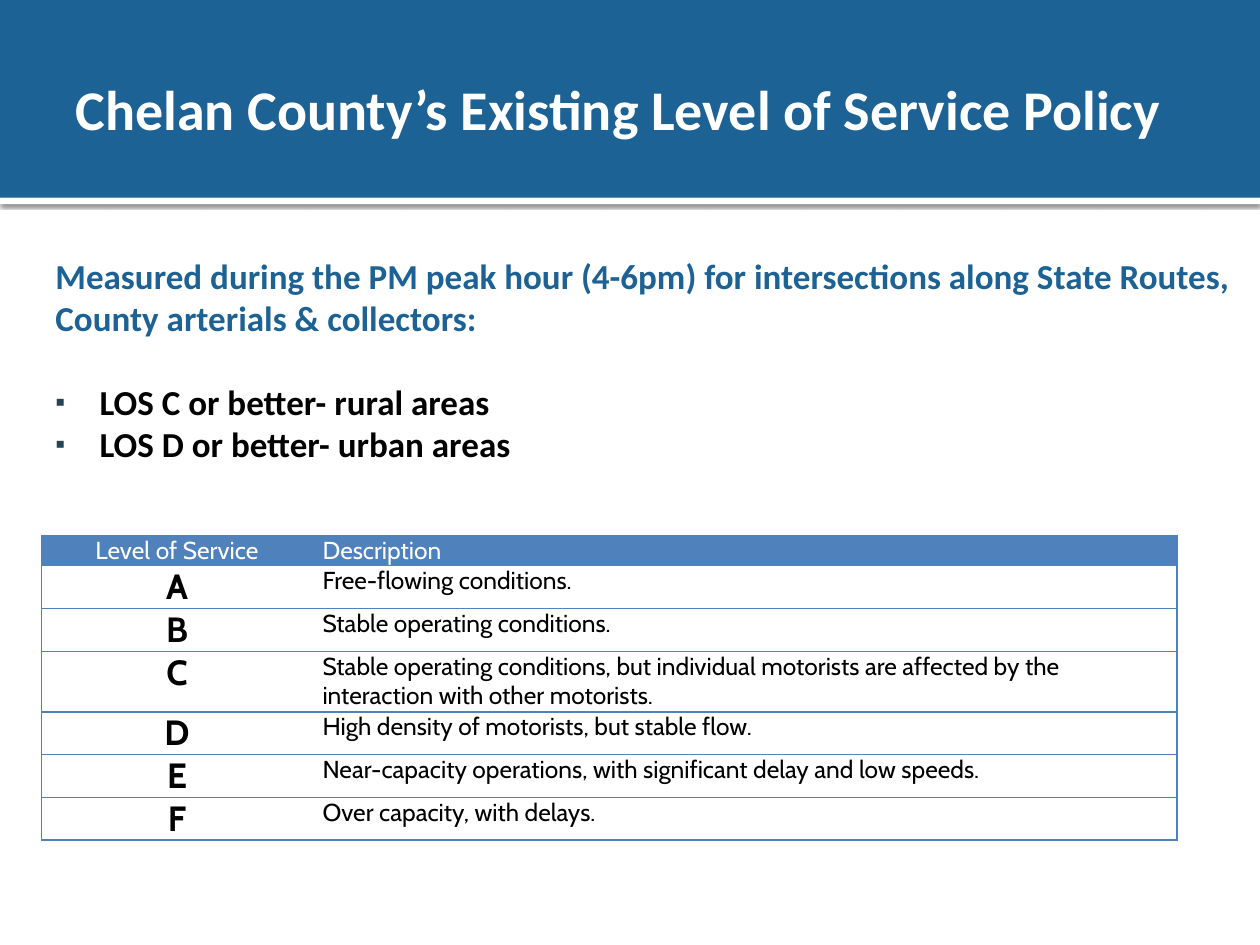
from typing import NamedTuple

from lxml.etree import SubElement
from pptx import Presentation
from pptx.dml.color import RGBColor
from pptx.enum.shapes import MSO_SHAPE
from pptx.enum.text import MSO_ANCHOR, MSO_AUTO_SIZE, PP_ALIGN
from pptx.oxml import parse_xml
from pptx.oxml.ns import nsdecls, qn
from pptx.util import Inches, Pt

BANNER_BLUE = RGBColor(0x1D, 0x62, 0x94)
BULLET_BLUE = RGBColor(0x26, 0x44, 0x57)
TABLE_BLUE = RGBColor(0x4F, 0x81, 0xBD)
WHITE = RGBColor(0xFF, 0xFF, 0xFF)
BLACK = RGBColor(0x00, 0x00, 0x00)


class Box(NamedTuple):
    left: float
    top: float
    width: float
    height: float


class ServiceLevel(NamedTuple):
    grade: str
    description: str
    height: float = 0.34


class TextStyle(NamedTuple):
    font: str
    size: float
    color: RGBColor
    bold: bool = False


HEADER = ServiceLevel("Level of Service", "Description", 0.24)
LEVELS = [
    ServiceLevel("A", "Free-flowing conditions."),
    ServiceLevel("B", "Stable operating conditions."),
    ServiceLevel("C", "Stable operating conditions, but individual motorists are affected "
                 "by the interaction with other motorists.", 0.48),
    ServiceLevel("D", "High density of motorists, but stable flow."),
    ServiceLevel("E", "Near-capacity operations, with significant delay and low speeds."),
    ServiceLevel("F", "Over capacity, with delays."),
]
COLUMN_WIDTHS = [2.15, 6.86]

TITLE_STYLE = TextStyle("Calibri", 32, WHITE, True)
LEAD_STYLE = TextStyle("Calibri", 20, BANNER_BLUE, True)
BULLET_STYLE = TextStyle("Calibri", 20, BLACK, True)
HEADER_STYLE = TextStyle("Cabin", 14, WHITE)
GRADE_STYLE = TextStyle("Cabin", 20, BLACK, True)
DESCRIPTION_STYLE = TextStyle("Cabin", 14, BLACK)


def place(shape, box: Box) -> None:
    shape.left, shape.top, shape.width, shape.height = map(Inches, box)


def set_margins(target, left: float, top: float, right: float, bottom: float) -> None:
    target.margin_left, target.margin_top = Inches(left), Inches(top)
    target.margin_right, target.margin_bottom = Inches(right), Inches(bottom)


def add_run(paragraph, text: str, style: TextStyle) -> None:
    run = paragraph.add_run()
    run.text = text
    run.font.name = style.font
    run.font.size = Pt(style.size)
    run.font.bold = style.bold
    run.font.color.rgb = style.color


def add_bar(slide, box: Box, color: RGBColor):
    """Add a plain rectangle behind the title."""
    bar = slide.shapes.add_shape(MSO_SHAPE.RECTANGLE, *map(Inches, box))
    bar.shadow.inherit = False
    bar.fill.solid()
    bar.fill.fore_color.rgb = color
    bar.line.fill.background()
    slide.shapes.title.element.addprevious(bar.element)
    return bar


def add_drop_shadow(shape) -> None:
    effects = shape.element.spPr.find(qn("a:effectLst"))
    effects.append(parse_xml(
        f'<a:outerShdw {nsdecls("a")} blurRad="{Pt(2.5)}" dist="{Pt(0.8)}" dir="5400000" '
        'rotWithShape="0"><a:srgbClr val="000000"><a:alpha val="60000"/></a:srgbClr></a:outerShdw>'))


def set_bullet(paragraph, bulleted: bool) -> None:
    """Set the indent, and either the square bullet or none."""
    properties = paragraph._p.get_or_add_pPr()
    margin, indent = (0.48, -0.35) if bulleted else (0.13, 0)
    properties.set("marL", str(Inches(margin)))
    properties.set("indent", str(Inches(indent)))
    if bulleted:
        color = SubElement(properties, qn("a:buClr"))
        SubElement(color, qn("a:srgbClr"), val=str(BULLET_BLUE))
        SubElement(properties, qn("a:buSzPct"), val="80000")
        SubElement(properties, qn("a:buChar"), char="▪")
    else:
        SubElement(properties, qn("a:buNone"))


def set_borders(cell, visible_sides: str) -> None:
    properties = cell._tc.get_or_add_tcPr()
    for side in "LRTB":
        line = SubElement(properties, qn(f"a:ln{side}"), w=str(Pt(1)))
        if side in visible_sides:
            fill = SubElement(line, qn("a:solidFill"))
            SubElement(fill, qn("a:srgbClr"), val=str(TABLE_BLUE))
        else:
            SubElement(line, qn("a:noFill"))


def fill_row(table, index: int, level: ServiceLevel, styles: list[TextStyle]) -> None:
    table.rows[index].height = Inches(level.height)
    texts = [level.grade, level.description]
    alignments = [PP_ALIGN.CENTER, PP_ALIGN.LEFT]
    for column, (text, style, alignment) in enumerate(zip(texts, styles, alignments)):
        cell = table.cell(index, column)
        set_margins(cell, 0.08, 0, 0.08, 0)
        set_borders(cell, ["LTB", "RTB"][column])
        if index == 0:
            cell.fill.solid()
            cell.fill.fore_color.rgb = TABLE_BLUE
        else:
            cell.fill.background()
        paragraph = cell.text_frame.paragraphs[0]
        paragraph.alignment = alignment
        add_run(paragraph, text, style)


def add_title(slide) -> None:
    title = slide.shapes.title
    place(title, Box(0.5, 0.17, 9, 1.37))
    frame = title.text_frame
    set_margins(frame, 0.1, 0.05, 0.05, 0.05)
    frame.auto_size = MSO_AUTO_SIZE.NONE
    frame.vertical_anchor = MSO_ANCHOR.MIDDLE
    frame.paragraphs[0].alignment = PP_ALIGN.LEFT
    add_run(frame.paragraphs[0], "Chelan County’s Existing Level of Service Policy", TITLE_STYLE)


def add_policy(slide) -> None:
    body = slide.placeholders[1]
    place(body, Box(0.25, 1.92, 10, 2.06))
    frame = body.text_frame
    set_margins(frame, 0.06, 0.1, 0.1, 0.05)
    frame.auto_size = MSO_AUTO_SIZE.NONE
    lead = frame.paragraphs[0]
    set_bullet(lead, False)
    lead.space_before = Pt(0)
    add_run(lead, "Measured during the PM peak hour (4-6pm) for intersections along "
            "State Routes, County arterials & collectors:", LEAD_STYLE)
    for text, gap in [("LOS C or better- rural areas", 24), ("LOS D or better- urban areas", 0)]:
        paragraph = frame.add_paragraph()
        set_bullet(paragraph, True)
        paragraph.space_before = Pt(gap)
        add_run(paragraph, text, BULLET_STYLE)


def add_level_table(slide) -> None:
    rows = [HEADER, *LEVELS]
    box = Box(0.33, 4.25, sum(COLUMN_WIDTHS), sum(row.height for row in rows))
    table = slide.shapes.add_table(len(rows), len(COLUMN_WIDTHS), *map(Inches, box)).table
    table.horz_banding = False
    for column, width in zip(table.columns, COLUMN_WIDTHS):
        column.width = Inches(width)
    fill_row(table, 0, HEADER, [HEADER_STYLE, HEADER_STYLE])
    for index, level in enumerate(LEVELS, start=1):
        fill_row(table, index, level, [GRADE_STYLE, DESCRIPTION_STYLE])


def main() -> None:
    presentation = Presentation()
    presentation.slide_width, presentation.slide_height = Inches(10), Inches(7.5)
    slide = presentation.slides.add_slide(presentation.slide_layouts[1])
    add_drop_shadow(add_bar(slide, Box(0, 1.57, 10, 0.05), WHITE))
    add_bar(slide, Box(0, 0, 10, 1.57), BANNER_BLUE)
    add_title(slide)
    add_policy(slide)
    add_level_table(slide)
    presentation.save("out.pptx")


if __name__ == "__main__":
    main()
